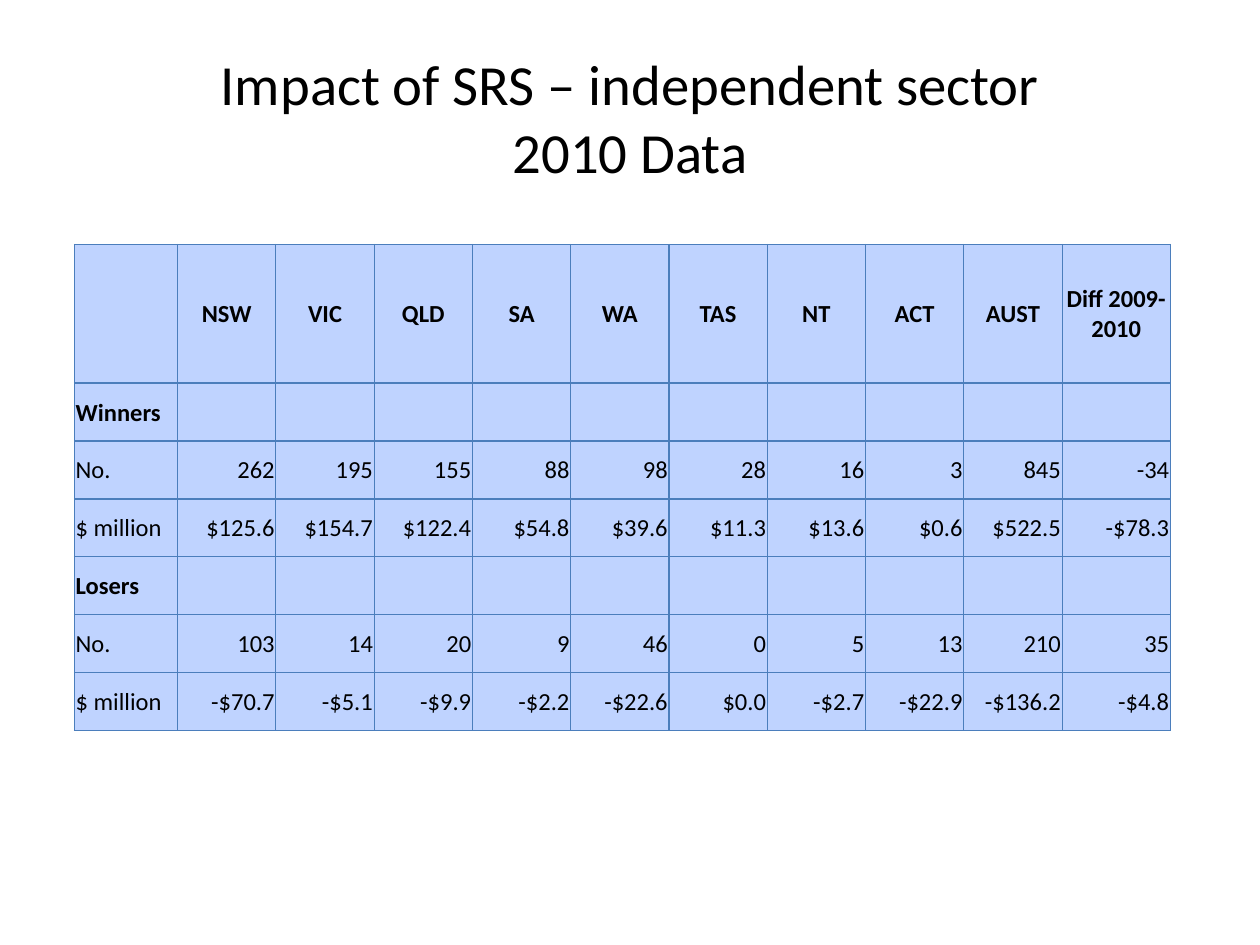
from dataclasses import dataclass

from lxml import etree
from pptx import Presentation
from pptx.dml.color import RGBColor
from pptx.enum.text import MSO_ANCHOR, MSO_AUTO_SIZE, PP_ALIGN
from pptx.oxml.ns import qn
from pptx.util import Inches, Pt

MIDDLE = MSO_ANCHOR.MIDDLE
NO_AUTOFIT = MSO_AUTO_SIZE.NONE
LEFT, CENTER, RIGHT = PP_ALIGN.LEFT, PP_ALIGN.CENTER, PP_ALIGN.RIGHT

BLACK = RGBColor(0x00, 0x00, 0x00)
CELL_BLUE = RGBColor(0xBF, 0xD3, 0xFF)
BORDER_BLUE = RGBColor(0x4B, 0x7E, 0xBC)
FONT = "Calibri"
BORDER_WIDTH = Pt(0.75)
TITLE_ONLY = 5

# Slide size and table grid, in inches
SLIDE_WIDTH, SLIDE_HEIGHT = 10, 7.5
TABLE_LEFT, TABLE_TOP = 0.59, 1.94
COLUMN_WIDTHS = [0.82] + [0.78] * 9 + [0.86]
ROW_HEIGHTS = [1.1] + [0.46] * 6

TITLE_LINES = ["Impact of SRS – independent sector", "2010 Data"]
REGIONS = ["NSW", "VIC", "QLD", "SA", "WA", "TAS", "NT", "ACT", "AUST", "Diff 2009-2010"]


@dataclass(frozen=True)
class Group:
    name: str
    counts: list[str]
    millions: list[str]

    def rows(self) -> list[list[str]]:
        return [
            [self.name] + [""] * len(REGIONS),
            ["No."] + self.counts,
            ["$ million"] + self.millions,
        ]


GROUPS = [
    Group(
        "Winners",
        ["262", "195", "155", "88", "98", "28", "16", "3", "845", "-34"],
        ["$125.6", "$154.7", "$122.4", "$54.8", "$39.6", "$11.3", "$13.6", "$0.6", "$522.5", "-$78.3"],
    ),
    Group(
        "Losers",
        ["103", "14", "20", "9", "46", "0", "5", "13", "210", "35"],
        ["-$70.7", "-$5.1", "-$9.9", "-$2.2", "-$22.6", "$0.0", "-$2.7", "-$22.9", "-$136.2", "-$4.8"],
    ),
]


def add_run(paragraph, text: str, size: float, bold: bool = False) -> None:
    run = paragraph.add_run()
    run.text = text
    run.font.name = FONT
    run.font.size = Pt(size)
    run.font.bold = bold
    run.font.color.rgb = BLACK


def add_title(slide) -> None:
    title = slide.shapes.title
    title.left, title.top = Inches(0.05 * SLIDE_WIDTH), Inches(0.04 * SLIDE_HEIGHT)
    title.width, title.height = Inches(0.9 * SLIDE_WIDTH), Inches(SLIDE_HEIGHT / 6)
    frame = title.text_frame
    frame.auto_size = NO_AUTOFIT
    frame.vertical_anchor = MIDDLE
    paragraph = frame.paragraphs[0]
    paragraph.alignment = CENTER
    for index, line in enumerate(TITLE_LINES):
        if index:
            paragraph.add_line_break()
        add_run(paragraph, line, 32.4)


def add_borders(cell) -> None:
    properties = cell._tc.get_or_add_tcPr()
    for side in ("a:lnL", "a:lnR", "a:lnT", "a:lnB"):
        line = etree.SubElement(properties, qn(side), w=str(BORDER_WIDTH))
        fill = etree.SubElement(line, qn("a:solidFill"))
        etree.SubElement(fill, qn("a:srgbClr"), val=str(BORDER_BLUE))


def fill_cell(cell, text: str, alignment: PP_ALIGN, bold: bool) -> None:
    cell.margin_left = cell.margin_right = cell.margin_top = Inches(0.01)
    cell.margin_bottom = 0
    cell.vertical_anchor = MIDDLE
    add_borders(cell)
    cell.fill.solid()
    cell.fill.fore_color.rgb = CELL_BLUE
    if text:
        paragraph = cell.text_frame.paragraphs[0]
        paragraph.alignment = alignment
        add_run(paragraph, text, 14, bold)


def add_impact_table(slide) -> None:
    rows = [[""] + REGIONS] + [row for group in GROUPS for row in group.rows()]
    table = slide.shapes.add_table(
        len(ROW_HEIGHTS), len(COLUMN_WIDTHS),
        Inches(TABLE_LEFT), Inches(TABLE_TOP),
        Inches(sum(COLUMN_WIDTHS)), Inches(sum(ROW_HEIGHTS)),
    ).table
    table.first_row = table.horz_banding = False
    for column, width in zip(table.columns, COLUMN_WIDTHS):
        column.width = Inches(width)
    for row, height in zip(table.rows, ROW_HEIGHTS):
        row.height = Inches(height)

    group_names = {group.name for group in GROUPS}
    for row_index, texts in enumerate(rows):
        is_header = row_index == 0
        for column_index, text in enumerate(texts):
            alignment = CENTER if is_header else RIGHT if column_index else LEFT
            bold = is_header or text in group_names
            fill_cell(table.cell(row_index, column_index), text, alignment, bold)


def main() -> None:
    presentation = Presentation()
    presentation.slide_width = Inches(SLIDE_WIDTH)
    presentation.slide_height = Inches(SLIDE_HEIGHT)
    slide = presentation.slides.add_slide(presentation.slide_layouts[TITLE_ONLY])
    add_title(slide)
    add_impact_table(slide)
    presentation.save("out.pptx")


if __name__ == "__main__":
    main()
